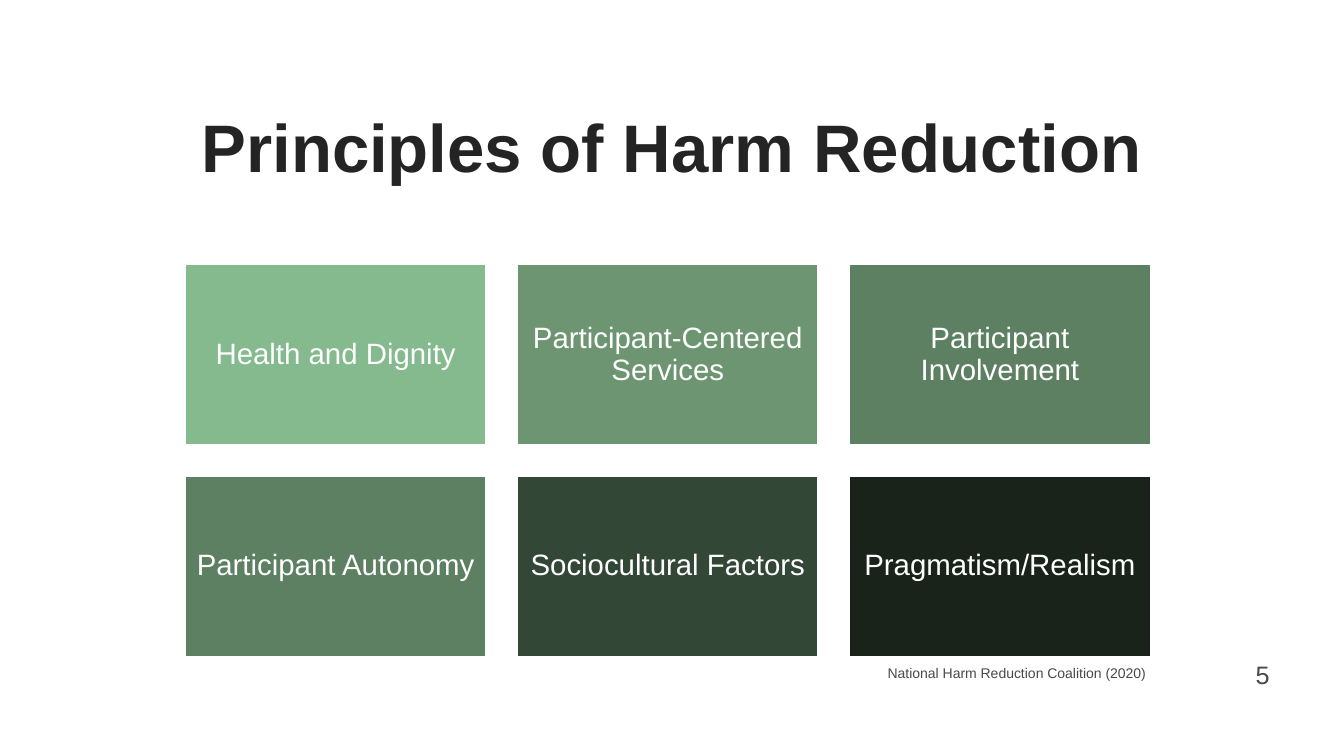
from pptx import Presentation
from pptx.dml.color import RGBColor
from pptx.enum.shapes import MSO_SHAPE as Shape
from pptx.enum.text import MSO_ANCHOR as Anchor, MSO_AUTO_SIZE as AutoSize, PP_ALIGN as Align
from pptx.util import Cm, Pt

FONT = "Arial"
WHITE, INK, GREY = "FFFFFF", "242424", "494949"
COLUMNS = 3
GAP = 0.77
PRINCIPLES = [
    ("Health and Dignity", "85B98E"),
    ("Participant-Centered Services", "6D9572"),
    ("Participant Involvement", "5D7F62"),
    ("Participant Autonomy", "5D7F62"),
    ("Sociocultural Factors", "334736"),
    ("Pragmatism/Realism", "1A231A"),
]


def color(hex_value):
    return RGBColor.from_string(hex_value)


def write(holder, wording, size, hex_value, align=Align.CENTER,
          anchor=Anchor.MIDDLE, bold=False, spacing=None):
    frame = holder.text_frame
    frame.text = wording
    frame.word_wrap = True
    frame.auto_size = AutoSize.NONE
    frame.vertical_anchor = anchor
    paragraph = frame.paragraphs[0]
    paragraph.alignment = align
    paragraph.line_spacing = spacing
    font = paragraph.runs[0].font
    font.name, font.size, font.bold = FONT, Pt(size), bold
    font.color.rgb = color(hex_value)
    return frame


def place_title(slide, left, top, width, height):
    title = slide.shapes.title
    title.left, title.top = Cm(left), Cm(top)
    title.width, title.height = Cm(width), Cm(height)
    write(title, "Principles of Harm Reduction", 48, INK, bold=True, spacing=0.9)


def place_tile(slide, principle, fill, left, top, width, height):
    tile = slide.shapes.add_shape(
        Shape.RECTANGLE, Cm(left), Cm(top), Cm(width), Cm(height))
    tile.shadow.inherit = False
    tile.fill.solid()
    tile.fill.fore_color.rgb = color(fill)
    tile.line.color.rgb = color(WHITE)
    tile.line.width = Pt(1.5)
    frame = write(tile, principle, 21, WHITE, spacing=0.9)
    frame.margin_left = frame.margin_right = Cm(0.23)
    frame.margin_top = frame.margin_bottom = Cm(0.23)


def place_principles(slide, left, top, width, height):
    rows = len(PRINCIPLES) // COLUMNS
    tile_width = (width - GAP * (COLUMNS - 1)) / COLUMNS
    tile_height = (height - GAP * (rows - 1)) / rows
    for index, (principle, fill) in enumerate(PRINCIPLES):
        row, column = divmod(index, COLUMNS)
        place_tile(slide, principle, fill,
                   left + column * (tile_width + GAP),
                   top + row * (tile_height + GAP),
                   tile_width, tile_height)


def place_note(slide, wording, size, left, top, width, height, **layout):
    note = slide.shapes.add_textbox(Cm(left), Cm(top), Cm(width), Cm(height))
    write(note, wording, size, GREY, **layout)


def main():
    deck = Presentation()
    deck.slide_width, deck.slide_height = Cm(33.87), Cm(19.05)
    slide = deck.slides.add_slide(deck.slide_layouts[5])

    # Heading
    place_title(slide, 2.54, 2.54, 28.79, 2.54)

    # Grid of principles
    place_principles(slide, 4.66, 6.66, 24.34, 9.89)

    # Source and page number
    place_note(slide, "National Harm Reduction Coalition (2020)", 10,
               22.12, 16.61, 7.2, 0.68, align=Align.LEFT, anchor=Anchor.TOP)
    place_note(slide, "5", 18, 31.12, 16.48, 1.4, 1.02)

    deck.save("out.pptx")


if __name__ == "__main__":
    main()
